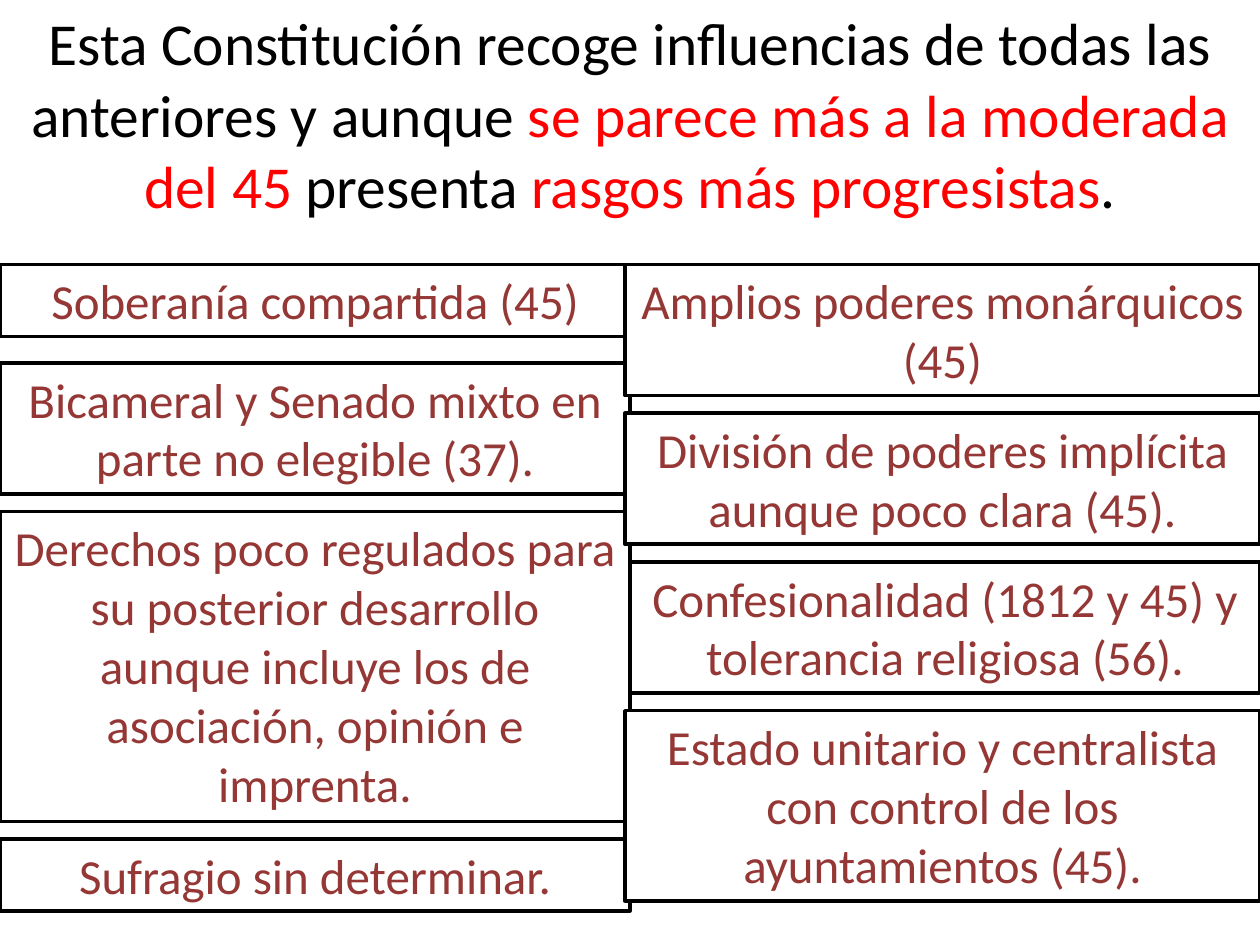
from dataclasses import dataclass

from pptx import Presentation
from pptx.dml.color import RGBColor
from pptx.enum.shapes import MSO_SHAPE as Shape
from pptx.enum.text import MSO_ANCHOR as Anchor, MSO_AUTO_SIZE as AutoSize, PP_ALIGN as Align
from pptx.slide import Slide
from pptx.util import Inches, Pt

BLACK = RGBColor(0x00, 0x00, 0x00)
WHITE = RGBColor(0xFF, 0xFF, 0xFF)
RED = RGBColor(0xFF, 0x00, 0x00)
MAROON = RGBColor(0x95, 0x37, 0x35)
FONT = "Calibri"
TITLE_ONLY = 5
SLIDE_WIDTH = 10
LEFT_COLUMN, MIDDLE, RIGHT_COLUMN = 0, 5, 4.96
BOX_HEIGHTS = {1: 0.57, 2: 1.04, 3: 1.51, 5: 2.46}


@dataclass(frozen=True)
class Feature:
    text: str
    left: float
    top: float
    lines: int

    @property
    def width(self) -> float:
        return MIDDLE if self.left == LEFT_COLUMN else SLIDE_WIDTH - self.left


TITLE_RUNS = [
    ("Esta Constitución recoge influencias de todas las anteriores y aunque ", BLACK),
    ("se parece más a la moderada del 45", RED),
    (" presenta ", BLACK),
    ("rasgos más progresistas", RED),
    (".", BLACK),
]

FEATURES = [
    Feature("Soberanía compartida (45)", LEFT_COLUMN, 2.1, 1),
    Feature("Bicameral y Senado mixto en parte no elegible (37).", LEFT_COLUMN, 2.88, 2),
    Feature(
        "Derechos poco regulados para su posterior desarrollo aunque incluye "
        "los de asociación, opinión e imprenta.",
        LEFT_COLUMN, 4.06, 5,
    ),
    Feature("Confesionalidad (1812 y 45) y tolerancia religiosa (56).", MIDDLE, 4.46, 2),
    Feature("Sufragio sin determinar.", LEFT_COLUMN, 6.66, 1),
    Feature("División de poderes implícita aunque poco clara (45).", RIGHT_COLUMN, 3.28, 2),
    Feature(
        "Estado unitario y centralista con control de los ayuntamientos (45).",
        RIGHT_COLUMN, 5.64, 3,
    ),
    Feature("Amplios poderes monárquicos (45)", RIGHT_COLUMN, 2.1, 2),
]


def format_run(run, size: float, color: RGBColor) -> None:
    run.font.name = FONT
    run.font.size = Pt(size)
    run.font.color.rgb = color


def format_frame(text_frame) -> None:
    text_frame.word_wrap = True
    text_frame.auto_size = AutoSize.SHAPE_TO_FIT_TEXT
    text_frame.vertical_anchor = Anchor.TOP
    text_frame.paragraphs[0].alignment = Align.CENTER


def draw_title(slide: Slide) -> None:
    title = slide.shapes.title
    title.left, title.top = Inches(0), Inches(0)
    title.width, title.height = Inches(SLIDE_WIDTH), Inches(1.82)
    format_frame(title.text_frame)
    paragraph = title.text_frame.paragraphs[0]
    for text, color in TITLE_RUNS:
        run = paragraph.add_run()
        run.text = text
        format_run(run, 34, color)


def draw_feature(slide: Slide, feature: Feature) -> None:
    shape = slide.shapes.add_shape(
        Shape.RECTANGLE,
        Inches(feature.left),
        Inches(feature.top),
        Inches(feature.width),
        Inches(BOX_HEIGHTS[feature.lines]),
    )
    shape.shadow.inherit = False
    shape.fill.solid()
    shape.fill.fore_color.rgb = WHITE
    shape.line.color.rgb = BLACK
    shape.line.width = Pt(2)
    shape.text_frame.text = feature.text
    format_frame(shape.text_frame)
    format_run(shape.text_frame.paragraphs[0].runs[0], 28, MAROON)


def main() -> None:
    presentation = Presentation()
    presentation.slide_width = Inches(SLIDE_WIDTH)
    presentation.slide_height = Inches(7.5)
    slide = presentation.slides.add_slide(presentation.slide_layouts[TITLE_ONLY])
    draw_title(slide)
    for feature in FEATURES:
        draw_feature(slide, feature)
    presentation.save("out.pptx")


if __name__ == "__main__":
    main()
